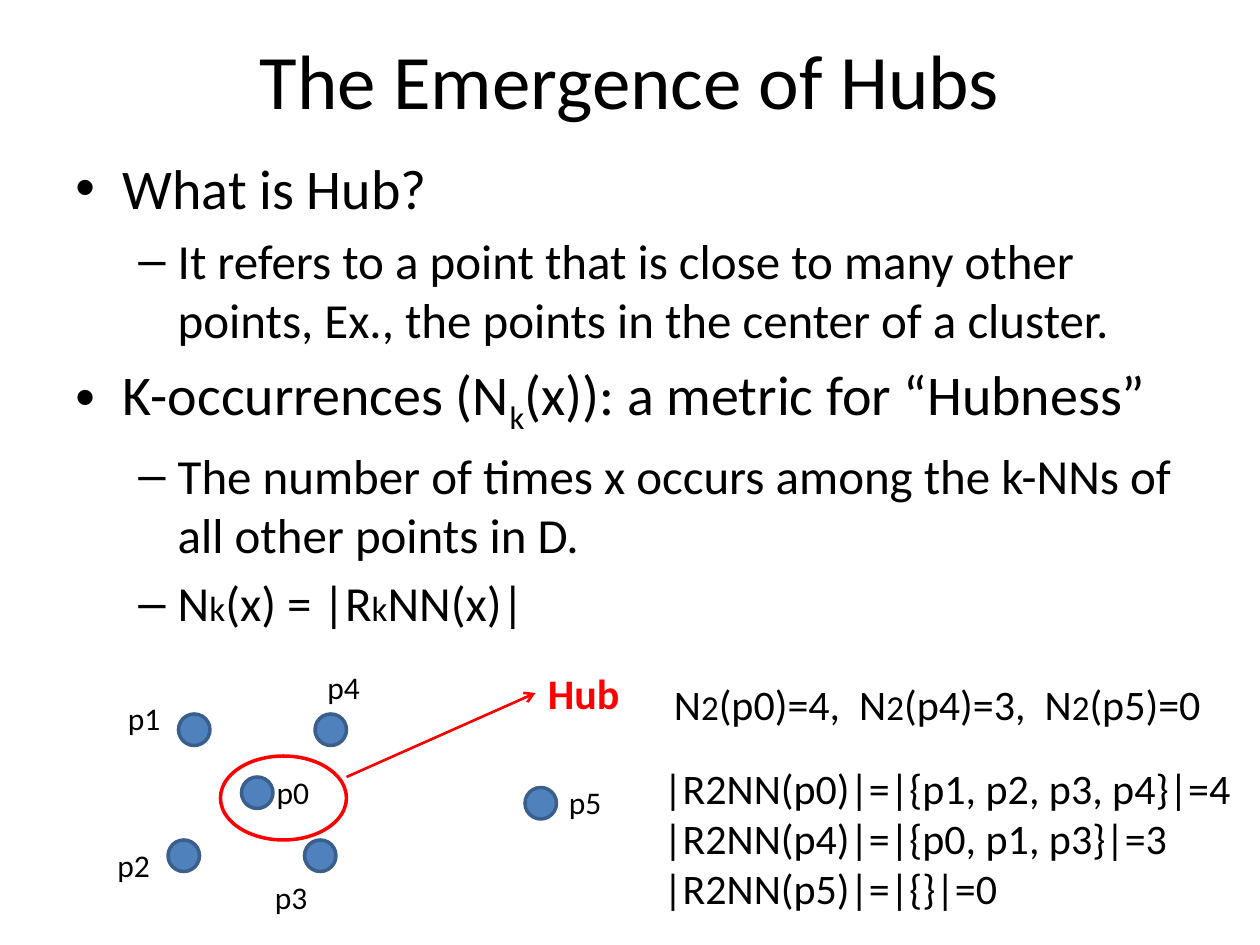
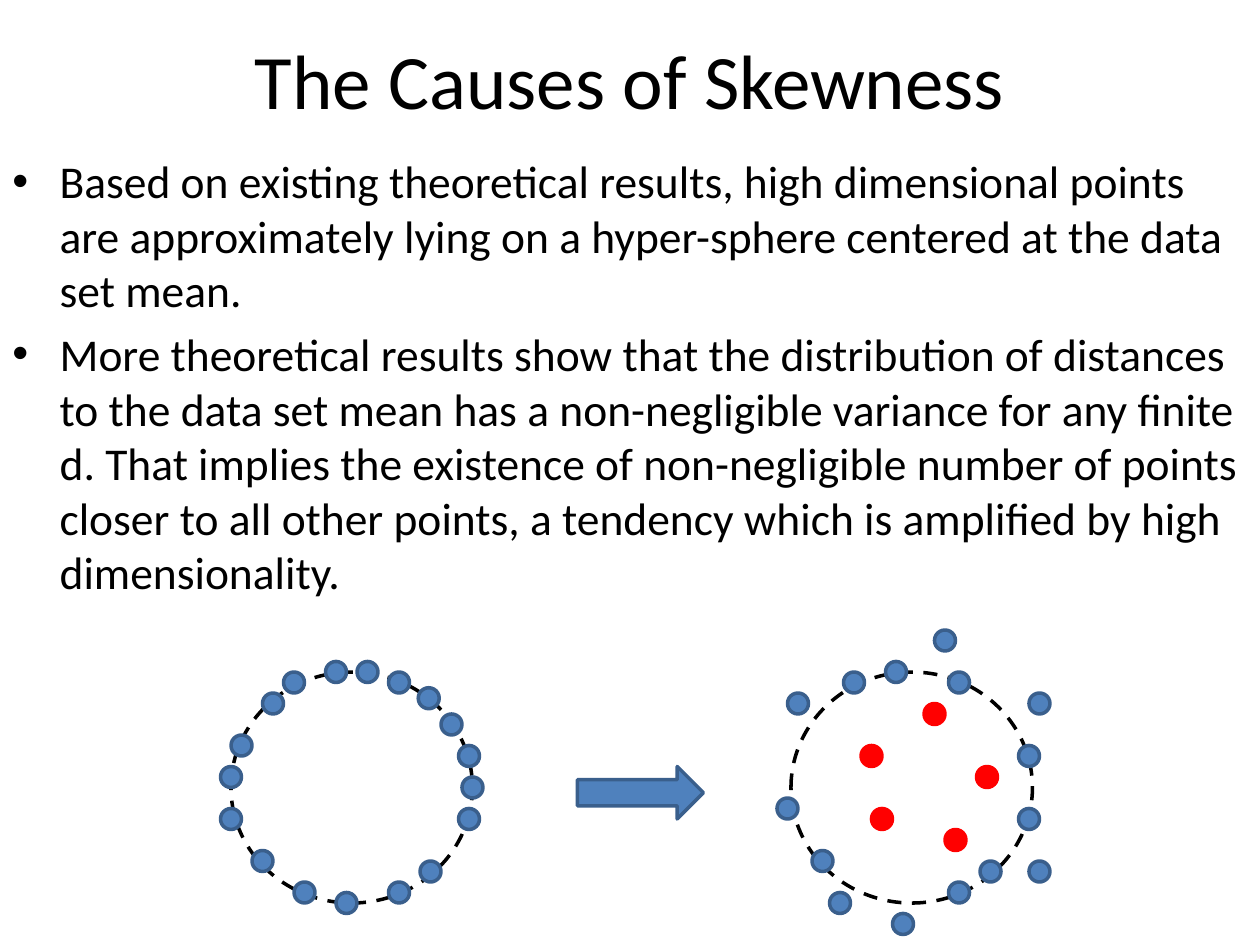
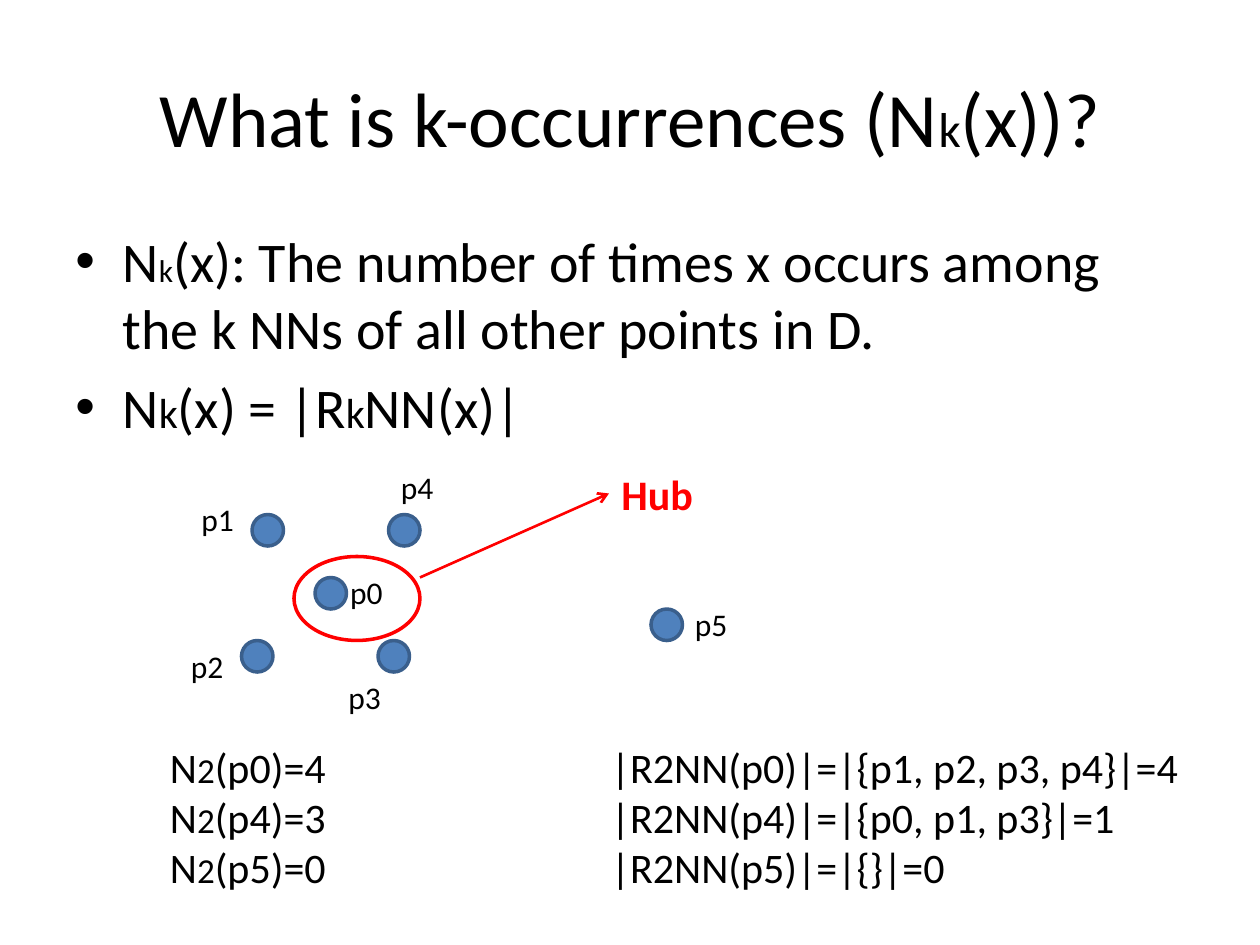
from lxml import etree
from pptx import Presentation
from pptx.dml.color import RGBColor
from pptx.enum.dml import MSO_LINE
from pptx.enum.shapes import MSO_CONNECTOR, MSO_SHAPE
from pptx.enum.text import MSO_ANCHOR, PP_ALIGN
from pptx.oxml.ns import qn
from pptx.util import Pt

OVAL, RIGHT_ARROW = MSO_SHAPE.OVAL, MSO_SHAPE.RIGHT_ARROW
STRAIGHT, DASH = MSO_CONNECTOR.STRAIGHT, MSO_LINE.DASH
CENTER, MIDDLE = PP_ALIGN.CENTER, MSO_ANCHOR.MIDDLE
TITLE_ONLY = 5
FONT = "Calibri"
SUB = "subscript"
COLORS = {"text": "000000", "blue": "4F81BD", "edge": "3A5F8C", "red": "FF0000"}
# Bullet level: character, left margin, hanging indent
BULLETS = [("•", 27, 27), ("–", 58.5, 22.5)]


def rgb(name):
    return RGBColor.from_string(COLORS[name])


def box(x, y, w, h):
    return Pt(x), Pt(y), Pt(w), Pt(h)


class Deck:
    """Holds the shared style and the current slide."""

    def __init__(self):
        self.prs = Presentation()
        self.prs.slide_width, self.prs.slide_height = Pt(720), Pt(540)

    def new_slide(self, runs, top=0):
        layout = self.prs.slide_layouts[TITLE_ONLY]
        self.s = self.prs.slides.add_slide(layout)
        title = self.s.shapes.title
        title.left, title.top, title.width, title.height = box(36, top, 648, 90)
        tf = title.text_frame
        tf.vertical_anchor = MIDDLE
        p = tf.paragraphs[0]
        p.alignment = CENTER
        self.runs(p, runs, 44)

    def runs(self, p, runs, size, color="text", bold=False):
        """Add runs, each a string or a (string, size or SUB) pair."""
        for item in runs:
            text, own = (item, size) if isinstance(item, str) else item
            r = p.add_run()
            r.text = text
            r.font.name, r.font.bold = FONT, bold
            r.font.size = Pt(size if own == SUB else own)
            r.font.color.rgb = rgb(color)
            if own == SUB:
                r._r.get_or_add_rPr().set("baseline", "-25000")

    def frame(self, x, y, w, h):
        sp = self.s.shapes.add_textbox(*box(x, y, w, h))
        sp.text_frame.word_wrap = True
        return sp

    def text(self, x, y, w, h, lines, size=24, color="text", bold=False):
        sp = self.frame(x, y, w, h)
        tf = sp.text_frame
        for i, runs in enumerate(lines):
            p = tf.add_paragraph() if i else tf.paragraphs[0]
            self.runs(p, runs, size, color, bold)
        return sp

    def bullets(self, x, y, w, h, items):
        """Add bulleted paragraphs from (level, size, runs) items."""
        tf = self.frame(x, y, w, h).text_frame
        for i, (level, size, runs) in enumerate(items):
            p = tf.add_paragraph() if i else tf.paragraphs[0]
            p.level = level
            p.space_before = Pt(size * 0.2)
            char, margin, hang = BULLETS[level]
            pPr = p._p.get_or_add_pPr()
            pPr.set("marL", str(Pt(margin)))
            pPr.set("indent", str(-Pt(hang)))
            etree.SubElement(pPr, qn("a:buFont"), typeface="Arial")
            etree.SubElement(pPr, qn("a:buChar"), char=char)
            self.runs(p, runs, size)

    def shape(self, kind, x, y, w, h, fill=None, line="edge", dash=None):
        sp = self.s.shapes.add_shape(kind, *box(x, y, w, h))
        sp.shadow.inherit = False
        if fill:
            sp.fill.solid()
            sp.fill.fore_color.rgb = rgb(fill)
        else:
            sp.fill.background()
        sp.line.color.rgb = rgb(line)
        sp.line.width = Pt(2)
        if dash:
            sp.line.dash_style = dash

    def dot(self, x, y, size, fill="blue", line="edge"):
        self.shape(OVAL, x, y, size, size, fill, line)

    def arrow_to(self, x, y, target):
        """Draw a red arrow to the middle of the target's left side."""
        c = self.s.shapes.add_connector(STRAIGHT, Pt(x), Pt(y), Pt(x), Pt(y))
        c.end_connect(target, 1)
        c.line.color.rgb = rgb("red")
        c.line.width = Pt(1.5)
        etree.SubElement(c.line._get_or_add_ln(), qn("a:tailEnd"), type="arrow")
        etree.SubElement(c._element.spPr, qn("a:effectLst"))

    def point(self, name, x, y, dx, dy):
        """Draw a data point with its label offset by (dx, dy)."""
        self.dot(x, y, 18)
        self.text(x + dx, y + dy, 36, 29, [[name]], 18)

    def hub_diagram(self, x, y, p5):
        """Draw the hub example; (x, y) is the corner of the ring around p0."""
        for name, px, py, dx, dy in HUB_POINTS:
            self.point(name, x + px, y + py, dx, dy)
        self.point("p5", *p5, 18, -6)
        self.shape(OVAL, x, y, 72, 48, line="red")
        hub = self.text(x + 180, y - 54, 72, 36, [["Hub"]], color="red", bold=True)
        self.arrow_to(x + 72, y + 12, hub)

    def reverse_nns(self, x, y, p4_count):
        self.text(x, y, 348, 94, [["|R2NN(p0)|=|{p1, p2, p3, p4}|=4"],
                                  [f"|R2NN(p4)|=|{{p0, p1, p3}}|={p4_count}"],
                                  ["|R2NN(p5)|=|{}|=0"]])


# Name, position relative to the ring, label offset from the dot
HUB_POINTS = [
    ("p1", -24, -24, -36, -12),
    ("p2", -30, 48, -36, 0),
    ("p3", 48, 48, -24, 18),
    ("p4", 54, -24, 0, -30),
    ("p0", 12, 12, 13, -6),
]

# Dots of the two hyper-spheres
ON_SPHERE = [
    (132, 420), (162, 384), (222, 384), (144, 486), (192, 510), (240, 492),
    (264, 444), (252, 408), (126, 462), (204, 378), (150, 396), (186, 378),
    (239, 393), (262, 462), (222, 504), (168, 504), (126, 438), (262, 426),
]
SPREAD = [
    (450, 396), (482, 384), (542, 384), (464, 486), (510, 522), (560, 492),
    (588, 396), (506, 378), (534, 360), (582, 462), (542, 504), (474, 510),
    (444, 456), (582, 426), (588, 492),
]
NEAR_MEAN = [(558, 438), (498, 462), (528, 402), (492, 426), (540, 474)]


def k_equation(k_size):
    return ["N", ("k", k_size), "(x) = |R", ("k", k_size), "NN(x)|"]


def n2(tail):
    return ["N", ("2", 20), tail]


def main():
    deck = Deck()

    # Slide 1: hubs
    deck.new_slide(["The Emergence of Hubs"])
    deck.bullets(36, 84, 648, 356, [
        (0, 32, ["What is Hub?"]),
        (1, 28, ["It refers to a point that is close to many other points, "
                 "Ex., the points in the center of a cluster."]),
        (0, 32, ["K-occurrences (N", ("k", SUB), "(x)): a metric for “Hubness”"]),
        (1, 28, ["The number of times x occurs among the k-NNs of "
                 "all other points in D."]),
        (1, 28, k_equation(20)),
    ])
    deck.hub_diagram(126, 432, p5=(300, 450))
    deck.text(378, 384, 342, 36,
              [n2("(p0)=4,  ") + n2("(p4)=3,  ") + n2("(p5)=0")])
    deck.reverse_nns(372, 432, 3)

    # Slide 2: skewness
    deck.new_slide(["The Causes of Skewness"])
    deck.bullets(0, 84, 720, 356, [
        (0, 26, ["Based on existing theoretical results, high dimensional points "
                 "are approximately lying on a hyper-sphere centered at the data "
                 "set mean."]),
        (0, 26, ["More theoretical results show that the distribution of distances "
                 "to the data set mean has a non-negligible variance for any finite "
                 "d. That implies the existence of non-negligible number of points "
                 "closer to all other points, a tendency which is amplified by high "
                 "dimensionality."]),
    ])
    for x in (132, 452):
        deck.shape(OVAL, x, 384, 138, 132, line="text", dash=DASH)
    deck.shape(RIGHT_ARROW, 330, 438, 72, 30, "blue")
    for x, y in ON_SPHERE + SPREAD:
        deck.dot(x, y, 12)
    for x, y in NEAR_MEAN:
        deck.dot(x, y, 12, "red", "red")

    # Slide 3: k-occurrences
    deck.new_slide(["What is k-occurrences (N", ("k", 28), "(x))?"], top=21.6)
    deck.bullets(36, 126, 648, 356, [
        (0, 32, ["N", ("k", 18), "(x): The number of times x occurs among "
                                 "the k NNs of all other points in D."]),
        (0, 32, k_equation(24)),
    ])
    deck.hub_diagram(168, 318, p5=(372, 348))
    deck.text(90, 420, 120, 94, [n2("(p0)=4"), n2("(p4)=3"), n2("(p5)=0")])
    deck.reverse_nns(342, 420, 1)

    deck.prs.save("out.pptx")


if __name__ == "__main__":
    main()
